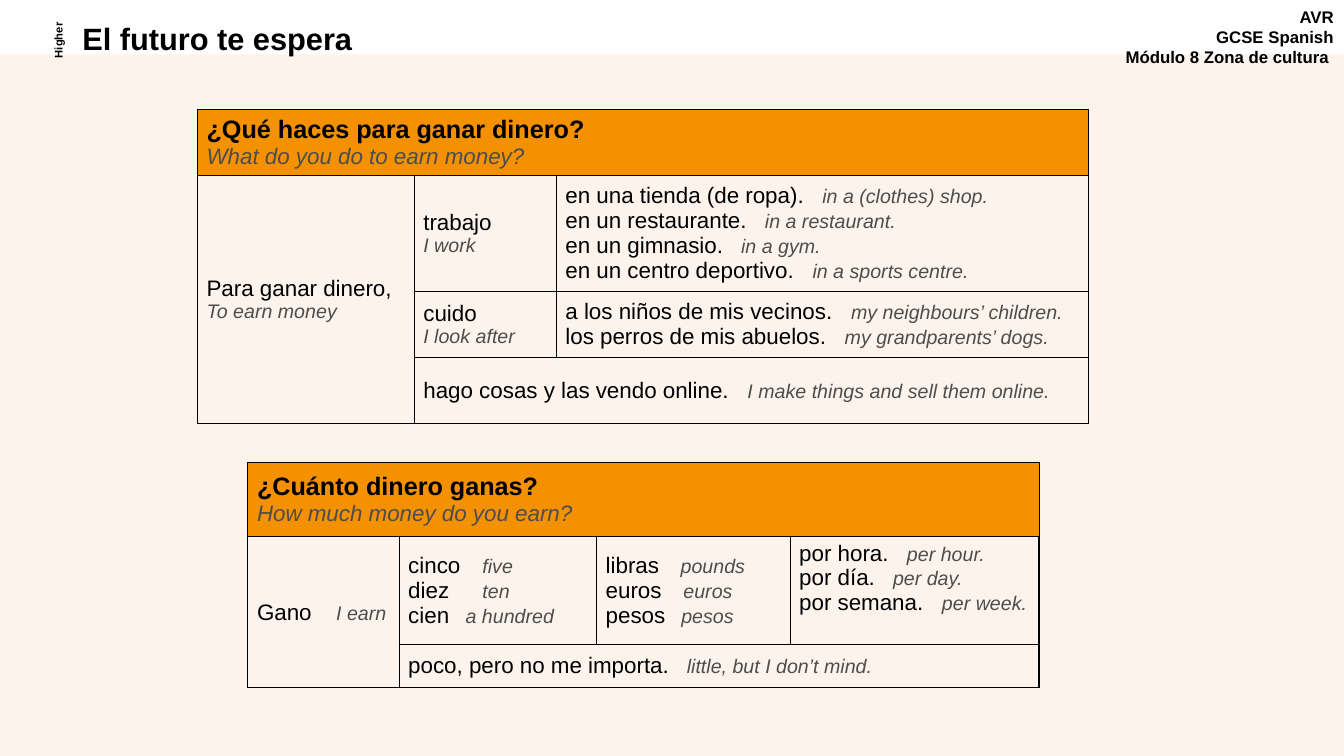
from lxml.etree import SubElement
from pptx import Presentation
from pptx.dml.color import RGBColor
from pptx.enum.shapes import MSO_SHAPE as Shape
from pptx.enum.text import MSO_ANCHOR as Anchor, PP_ALIGN as Align
from pptx.oxml.ns import qn
from pptx.util import Pt

THEME = {
    "font": "Arial",
    "line": "000000",
    "header": "F39100",
    "panel": "FDF3ED",
    "title": {"size": 22, "color": "000000", "bold": True, "italic": False},
    "course": {"size": 12, "color": "000000", "bold": True, "italic": False},
    "tier": {"size": 8, "color": "000000", "bold": True, "italic": False},
    "question": {"size": 18, "color": "000000", "bold": True, "italic": False},
    "translation": {"size": 16, "color": "4D4D4C", "bold": False, "italic": True},
    "term": {"size": 16, "color": "000000", "bold": False, "italic": False},
    "gloss": {"size": 14, "color": "4D4D4C", "bold": False, "italic": True},
}


def add_run(paragraph, text, style):
    run = paragraph.add_run()
    run.text = text
    look = THEME[style]
    values = {"name": THEME["font"], "size": Pt(look["size"]),
              "bold": look["bold"], "italic": look["italic"]}
    for name, value in values.items():
        setattr(run.font, name, value)
    run.font.color.rgb = RGBColor.from_string(look["color"])


def add_border(cell, width):
    properties = cell._tc.get_or_add_tcPr()
    for side in ("lnL", "lnR", "lnT", "lnB"):
        line = SubElement(properties, qn(f"a:{side}"), w=str(Pt(width)))
        fill = SubElement(line, qn("a:solidFill"))
        SubElement(fill, qn("a:srgbClr"), val=THEME["line"])


presentation = Presentation()
presentation.slide_width = Pt(960)
presentation.slide_height = Pt(540)
slide = presentation.slides.add_slide(presentation.slide_layouts[6])

panel = slide.shapes.add_shape(Shape.RECTANGLE, Pt(0), Pt(38.9), Pt(960), Pt(501.1))
panel.shadow.inherit = False
panel.fill.solid()
panel.fill.fore_color.rgb = RGBColor.from_string(THEME["panel"])
panel.line.fill.background()

LABELS = [
    ("course", (791.3, 1.4, 168.5, 55.4), 0, Align.RIGHT, Anchor.TOP, 1,
     ["AVR", "GCSE Spanish", "Módulo 8 Zona de cultura "]),
    ("title", (51.8, 13.7, 614.2, 31), 0, Align.LEFT, Anchor.MIDDLE, 0.9,
     ["El futuro te espera"]),
    ("tier", (13, 20.9, 56.2, 15.8), 270, Align.CENTER, Anchor.TOP, 1, ["Higher"]),
]
for style, box, rotation, alignment, anchor, spacing, lines in LABELS:
    label = slide.shapes.add_textbox(*map(Pt, box))
    label.rotation = rotation
    frame = label.text_frame
    frame.word_wrap = True
    frame.vertical_anchor = anchor
    for index, text in enumerate(lines):
        paragraph = frame.add_paragraph() if index else frame.paragraphs[0]
        paragraph.alignment = alignment
        paragraph.line_spacing = spacing
        add_run(paragraph, text, style)

# Each entry: tab stop for the gloss (0 puts it on its own line), term, gloss.
TABLES = [
    {
        "position": (141.1, 78.5),
        "columns": (154.8, 101.5, 380.2),
        "rows": (44, 77, 47.5, 47),
        "cells": [
            (0, 0, 1, 3, [(0, "¿Qué haces para ganar dinero?", "What do you do to earn money?")]),
            (1, 0, 3, 1, [(0, "Para ganar dinero,", "To earn money")]),
            (1, 1, 1, 1, [(0, "trabajo", "I work")]),
            (1, 2, 1, 1, [
                (183.5, "en una tienda (de ropa).", "in a (clothes) shop."),
                (142.5, "en un restaurante.", "in a restaurant."),
                (125.5, "en un gimnasio.", "in a gym."),
                (176.5, "en un centro deportivo.", "in a sports centre."),
            ]),
            (2, 1, 1, 1, [(0, "cuido", "I look after")]),
            (2, 2, 1, 1, [
                (204, "a los niños de mis vecinos.", "my neighbours’ children."),
                (199.5, "los perros de mis abuelos.", "my grandparents’ dogs."),
            ]),
            (3, 1, 1, 2, [
                (231.5, "hago cosas y las vendo online.", "I make things and sell them online."),
            ]),
        ],
    },
    {
        "position": (177.1, 330.4),
        "columns": (108, 141.1, 138.2, 177.8),
        "rows": (53, 77, 31),
        "cells": [
            (0, 0, 1, 4, [(0, "¿Cuánto dinero ganas?", "How much money do you earn?")]),
            (1, 0, 2, 1, [(56.5, "Gano", "I earn")]),
            (1, 1, 1, 1, [
                (53, "cinco", "five"),
                (53, "diez", "ten"),
                (41, "cien", "a hundred"),
            ]),
            (1, 2, 1, 1, [
                (53.5, "libras", "pounds"),
                (55.5, "euros", "euros"),
                (54, "pesos", "pesos"),
            ]),
            (1, 3, 1, 1, [
                (77, "por hora.", "per hour."),
                (67, "por día.", "per day."),
                (102, "por semana.", "per week."),
            ]),
            (2, 1, 1, 3, [(199, "poco, pero no me importa.", "little, but I don’t mind.")]),
        ],
    },
]
CELL_FORMAT = {"margin_left": Pt(6.5), "margin_right": Pt(6.5),
               "margin_top": Pt(3), "margin_bottom": Pt(3),
               "vertical_anchor": Anchor.MIDDLE}

for content in TABLES:
    columns, rows = content["columns"], content["rows"]
    size = (sum(columns), sum(rows))
    table = slide.shapes.add_table(
        len(rows), len(columns), *map(Pt, content["position"] + size)).table
    table.first_row = False
    table.horz_banding = False
    for column, width in zip(table.columns, columns):
        column.width = Pt(width)
    for row, height in zip(table.rows, rows):
        row.height = Pt(height)

    for row in range(len(rows)):
        for column in range(len(columns)):
            cell = table.cell(row, column)
            for name, value in CELL_FORMAT.items():
                setattr(cell, name, value)
            add_border(cell, 1 if row and column else 0.75)
            if row:
                cell.fill.background()
            else:
                cell.fill.solid()
                cell.fill.fore_color.rgb = RGBColor.from_string(THEME["header"])

    for row, column, down, across, entries in content["cells"]:
        cell = table.cell(row, column)
        if down * across > 1:
            cell.merge(table.cell(row + down - 1, column + across - 1))
        if column == 3:
            cell.vertical_anchor = Anchor.TOP
        term_style, gloss_style = ("term", "gloss") if row else ("question", "translation")
        frame = cell.text_frame
        for index, (stop, term, gloss) in enumerate(entries):
            paragraph = frame.add_paragraph() if index else frame.paragraphs[0]
            if stop:
                tabs = SubElement(paragraph._p.get_or_add_pPr(), qn("a:tabLst"))
                SubElement(tabs, qn("a:tab"), pos=str(Pt(stop)), algn="l")
                add_run(paragraph, term + "\t", term_style)
            else:
                add_run(paragraph, term, term_style)
                paragraph = frame.add_paragraph()
            add_run(paragraph, gloss, gloss_style)

presentation.save("out.pptx")
